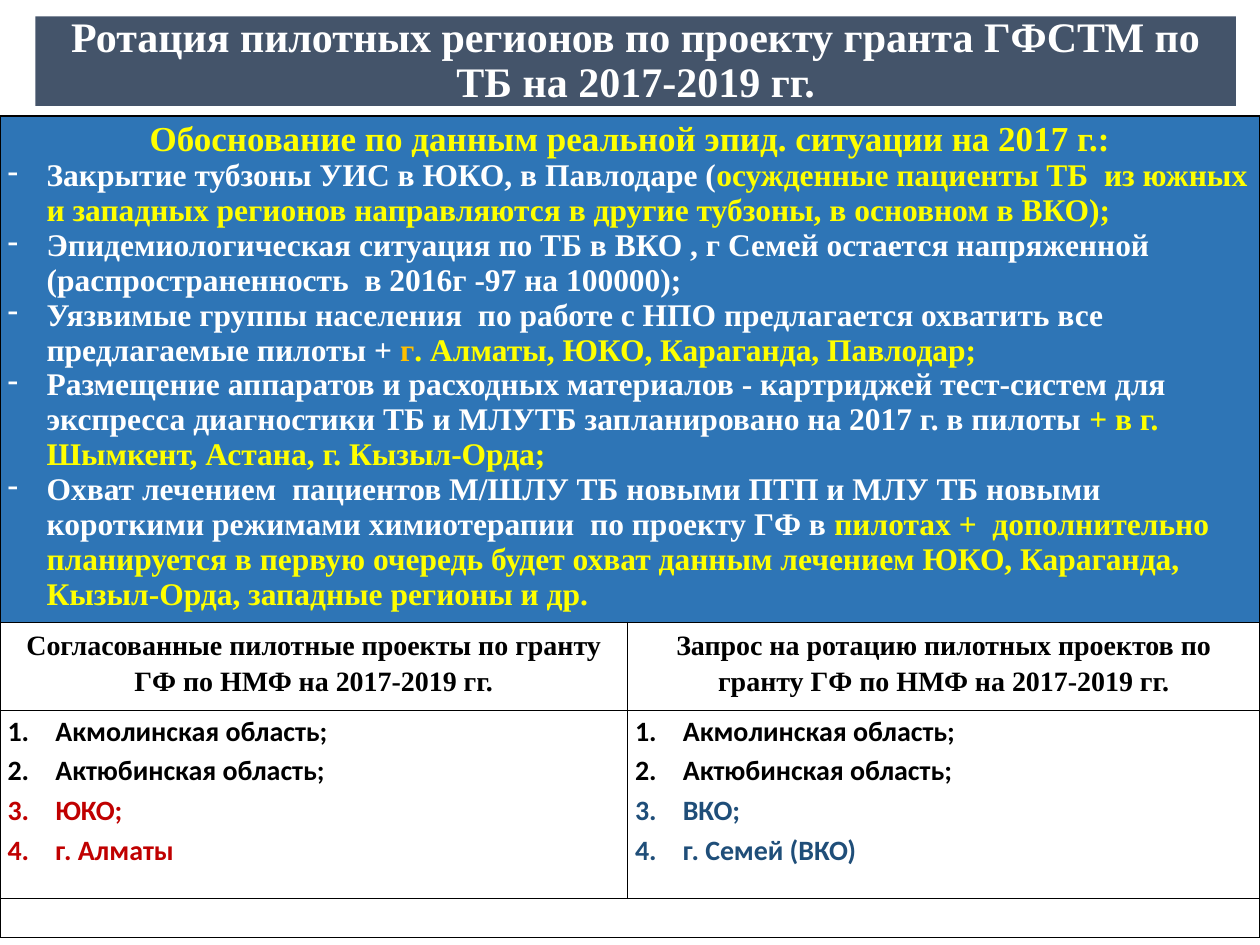
from lxml import etree
from pptx import Presentation
from pptx.dml.color import RGBColor
from pptx.enum import text
from pptx.oxml import ns
from pptx.util import Inches, Pt

WHITE, BLACK, YELLOW, ORANGE = "FFFFFF", "000000", "FFFF00", "FFC000"
RED, NAVY, BLUE, SLATE = "C00000", "1F4E79", "2E75B6", "44546A"
SERIF, SANS = "Times New Roman", "Calibri"

# Content: every paragraph is a list of (text, colour) runs
TITLE = "Ротация пилотных регионов по проекту гранта ГФСТМ по ТБ на 2017-2019 гг."
RATIONALE = "Обоснование по данным реальной эпид. ситуации на 2017 г.:"
REASONS = [
    [("Закрытие тубзоны УИС в ЮКО, в Павлодаре (", WHITE),
     ("осужденные пациенты ТБ  из южных и западных регионов направляются "
      "в другие тубзоны, в основном в ВКО);", YELLOW)],
    [("Эпидемиологическая ситуация по ТБ в ВКО , г Семей остается напряженной "
      "(распространенность  в 2016г -97 на 100000);", WHITE)],
    [("Уязвимые группы населения  по работе с НПО предлагается охватить все "
      "предлагаемые пилоты + ", WHITE),
     ("г", ORANGE),
     (". Алматы, ЮКО, Караганда, Павлодар;", YELLOW)],
    [("Размещение аппаратов и расходных материалов - картриджей тест-систем для "
      "экспресса диагностики ТБ и МЛУТБ запланировано на 2017 г. в пилоты ", WHITE),
     ("+ в г. Шымкент, Астана, г. Кызыл-Орда;", YELLOW)],
    [("Охват лечением  пациентов М/ШЛУ ТБ новыми ПТП и МЛУ ТБ новыми короткими "
      "режимами химиотерапии  по проекту ГФ в ", WHITE),
     ("пилотах +  дополнительно планируется в первую очередь будет охват данным "
      "лечением ЮКО, Караганда,  Кызыл-Орда, западные регионы и др.", YELLOW)],
]
COLUMNS = [
    ("Согласованные пилотные проекты по гранту ГФ по НМФ на 2017-2019 гг.",
     [("Акмолинская область;", BLACK), ("Актюбинская область;", BLACK),
      ("ЮКО;", RED), ("г. Алматы", RED)]),
    ("Запрос на ротацию пилотных проектов по гранту ГФ по НМФ на 2017-2019 гг.",
     [("Акмолинская область;", BLACK), ("Актюбинская область;", BLACK),
      ("ВКО;", NAVY), ("г. Семей (ВКО)", NAVY)]),
]
COLUMN_WIDTHS = [4.98, 5.02]
ROW_HEIGHTS = [4.02, 0.7, 1.49, 0.31]


def set_fill(item, colour):
    item.fill.solid()
    item.fill.fore_color.rgb = RGBColor.from_string(colour)


def write(paragraph, runs, size, font=SERIF, centred=False):
    paragraph.alignment = text.PP_ALIGN.CENTER if centred else text.PP_ALIGN.LEFT
    for words, colour in runs:
        run = paragraph.add_run()
        run.text = words
        run.font.name, run.font.size, run.font.bold = font, Pt(size), True
        run.font.color.rgb = RGBColor.from_string(colour)


def add_bullet(paragraph, indent, tag, **attributes):
    properties = paragraph._p.get_or_add_pPr()
    properties.set("marL", str(Inches(indent)))
    properties.set("indent", str(-Inches(indent)))
    etree.SubElement(properties, ns.qn(tag), attributes)


def add_borders(cell):
    properties = cell._tc.get_or_add_tcPr()
    for index, side in enumerate(("a:lnL", "a:lnR", "a:lnT", "a:lnB")):
        line = etree.Element(ns.qn(side), w=str(Pt(1)))
        fill = etree.SubElement(line, ns.qn("a:solidFill"))
        etree.SubElement(fill, ns.qn("a:srgbClr"), val=BLACK)
        properties.insert(index, line)


presentation = Presentation()
presentation.slide_width, presentation.slide_height = Inches(10), Inches(7.5)
slide = presentation.slides.add_slide(presentation.slide_layouts[5])

# Title band
title = slide.shapes.title
title.left, title.top = Inches(0.28), Inches(0.13)
title.width, title.height = Inches(9.53), Inches(0.71)
set_fill(title, SLATE)
frame = title.text_frame
frame.auto_size = text.MSO_AUTO_SIZE.NONE
frame.vertical_anchor = text.MSO_ANCHOR.MIDDLE
frame.paragraphs[0].line_spacing = 0.9
write(frame.paragraphs[0], [(TITLE, WHITE)], 24, centred=True)

# Table grid
table = slide.shapes.add_table(
    len(ROW_HEIGHTS), len(COLUMN_WIDTHS), 0, Inches(0.92),
    Inches(sum(COLUMN_WIDTHS)), Inches(sum(ROW_HEIGHTS))).table
table.first_row = table.horz_banding = False
for column, width in zip(table.columns, COLUMN_WIDTHS):
    column.width = Inches(width)
for row, height in zip(table.rows, ROW_HEIGHTS):
    row.height = Inches(height)
for cell in table.iter_cells():
    cell.margin_left = cell.margin_right = Inches(0.06)
    cell.margin_top = cell.margin_bottom = Inches(0.03)
    set_fill(cell, WHITE)
    add_borders(cell)
last_row = len(ROW_HEIGHTS) - 1
for row in (0, last_row):
    table.cell(row, 0).merge(table.cell(row, 1))

# Rationale
rationale = table.cell(0, 0)
set_fill(rationale, BLUE)
write(rationale.text_frame.paragraphs[0], [(RATIONALE, YELLOW)], 20, centred=True)
for runs in REASONS:
    paragraph = rationale.text_frame.add_paragraph()
    write(paragraph, runs, 18)
    add_bullet(paragraph, 0.31, "a:buChar", char="-")

# Column headings and numbered regions
for index, (heading, regions) in enumerate(COLUMNS):
    paragraph = table.cell(1, index).text_frame.paragraphs[0]
    paragraph.line_spacing, paragraph.space_after = 1.15, Pt(10)
    write(paragraph, [(heading, BLACK)], 16, centred=True)
    frame = table.cell(2, index).text_frame
    for number, region in enumerate(regions):
        paragraph = frame.add_paragraph() if number else frame.paragraphs[0]
        paragraph.space_before = Pt(3.2)
        write(paragraph, [region], 16, SANS)
        add_bullet(paragraph, 0.38, "a:buAutoNum", type="arabicPeriod")

# Small type keeps the empty last row low
for cell in table.rows[last_row].cells:
    etree.SubElement(cell.text_frame.paragraphs[0]._p, ns.qn("a:endParaRPr"), sz="1400")

presentation.save("out.pptx")
